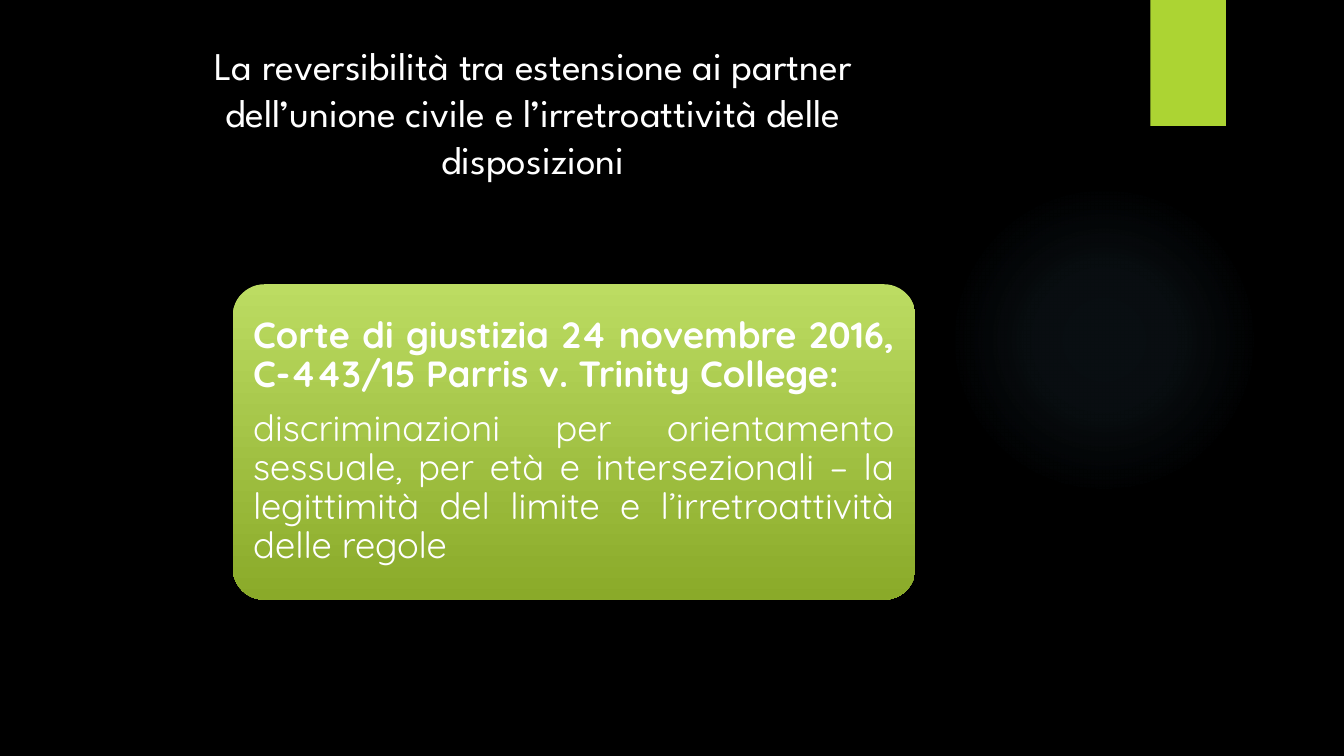
from lxml import etree
from pptx import Presentation
from pptx.dml.color import RGBColor
from pptx.enum.shapes import MSO_SHAPE as Shape
from pptx.enum.text import MSO_ANCHOR as Anchor, PP_ALIGN as Align
from pptx.oxml import parse_xml
from pptx.oxml.ns import nsdecls, qn
from pptx.util import Inches, Pt

BLACK = RGBColor(0x00, 0x00, 0x00)
WHITE = RGBColor(0xFF, 0xFF, 0xFF)
LIME = RGBColor(0xAC, 0xD4, 0x33)
CARD_TOP = RGBColor(0xBC, 0xDC, 0x62)
CARD_BOTTOM = RGBColor(0x8A, 0xAA, 0x29)
GLOW = RGBColor(0x7A, 0xC4, 0xF0)

GLOW_STOPS = [(0, 7), (36, 6), (69, 0)]
TITLE = ("La reversibilità tra estensione ai partner dell’unione civile "
         "e l’irretroattività delle disposizioni")
RULING = "Corte di giustizia 24 novembre 2016, C-443/15 Parris v. Trinity College:"
ISSUES = ("discriminazioni per orientamento sessuale, per età e intersezionali – "
          "la legittimità del limite e l’irretroattività delle regole")

TITLE_FONT = {"name": "League Spartan", "size": Pt(28), "bold": False}
RULING_FONT = {"name": "Quicksand", "size": Pt(26), "bold": True}
ISSUES_FONT = {**RULING_FONT, "bold": False}
CARD_PARAGRAPH = {"alignment": Align.JUSTIFY, "line_spacing": 0.9, "space_after": Pt(10)}


def set_all(target, values):
    for name, value in values.items():
        setattr(target, name, value)


def add_plain_shape(page, kind, left, top, width, height):
    """Add a shape without outline or shadow; the caller fills it."""
    shape = page.shapes.add_shape(
        kind, Inches(left), Inches(top), Inches(width), Inches(height))
    shape.shadow.inherit = False
    shape.line.fill.background()
    return shape


def write_paragraph(para, text, font, layout):
    set_all(para, layout)
    span = para.add_run()
    span.text = text
    set_all(span.font, font)
    span.font.color.rgb = WHITE


def add_glow(page):
    """Add a circle whose faint colour fades out from its centre."""
    circle = add_plain_shape(page, Shape.OVAL, 9.41, 1.83, 3.08, 3.08)
    stops = "".join(
        f'<a:gs pos="{position * 1000}"><a:srgbClr val="{GLOW}">'
        f'<a:alpha val="{opacity * 1000}"/></a:srgbClr></a:gs>'
        for position, opacity in GLOW_STOPS)
    gradient = parse_xml(
        f'<a:gradFill {nsdecls("a")}><a:gsLst>{stops}</a:gsLst><a:path path="circle">'
        '<a:fillToRect l="50000" t="50000" r="50000" b="50000"/></a:path></a:gradFill>')
    circle._element.spPr.find(qn("a:prstGeom")).addnext(gradient)


def add_tab(page):
    tab = add_plain_shape(page, Shape.RECTANGLE, 11.41, 0, 0.75, 1.25)
    tab.fill.solid()
    tab.fill.fore_color.rgb = LIME


def add_card(page):
    card = add_plain_shape(page, Shape.ROUNDED_RECTANGLE, 2.31, 2.82, 6.77, 3.13)
    card.adjustments[0] = 0.1
    card.fill.gradient()
    card.fill.gradient_angle = 270
    for stop, color in zip(card.fill.gradient_stops, (CARD_TOP, CARD_BOTTOM)):
        stop.color.rgb = color
    frame = card.text_frame
    set_all(frame, {"word_wrap": True, "vertical_anchor": Anchor.MIDDLE})
    set_all(frame, {f"margin_{side}": Inches(0.11)
                    for side in ("left", "top", "right", "bottom")})
    write_paragraph(frame.paragraphs[0], RULING, RULING_FONT, CARD_PARAGRAPH)
    write_paragraph(frame.add_paragraph(), ISSUES, ISSUES_FONT, CARD_PARAGRAPH)


def add_title(page):
    box = page.shapes.add_textbox(Inches(1.31), Inches(0.36), Inches(7.95), Inches(1.51))
    box.text_frame.word_wrap = True
    write_paragraph(box.text_frame.paragraphs[0], TITLE, TITLE_FONT,
                    {"alignment": Align.CENTER})


def main():
    deck = Presentation()
    set_all(deck, {"slide_width": Inches(13.33), "slide_height": Inches(7.5)})
    page = deck.slides.add_slide(deck.slide_layouts[6])
    page.background.fill.solid()
    page.background.fill.fore_color.rgb = BLACK
    add_glow(page)
    add_tab(page)
    add_card(page)
    add_title(page)
    deck.save("out.pptx")


if __name__ == "__main__":
    main()
